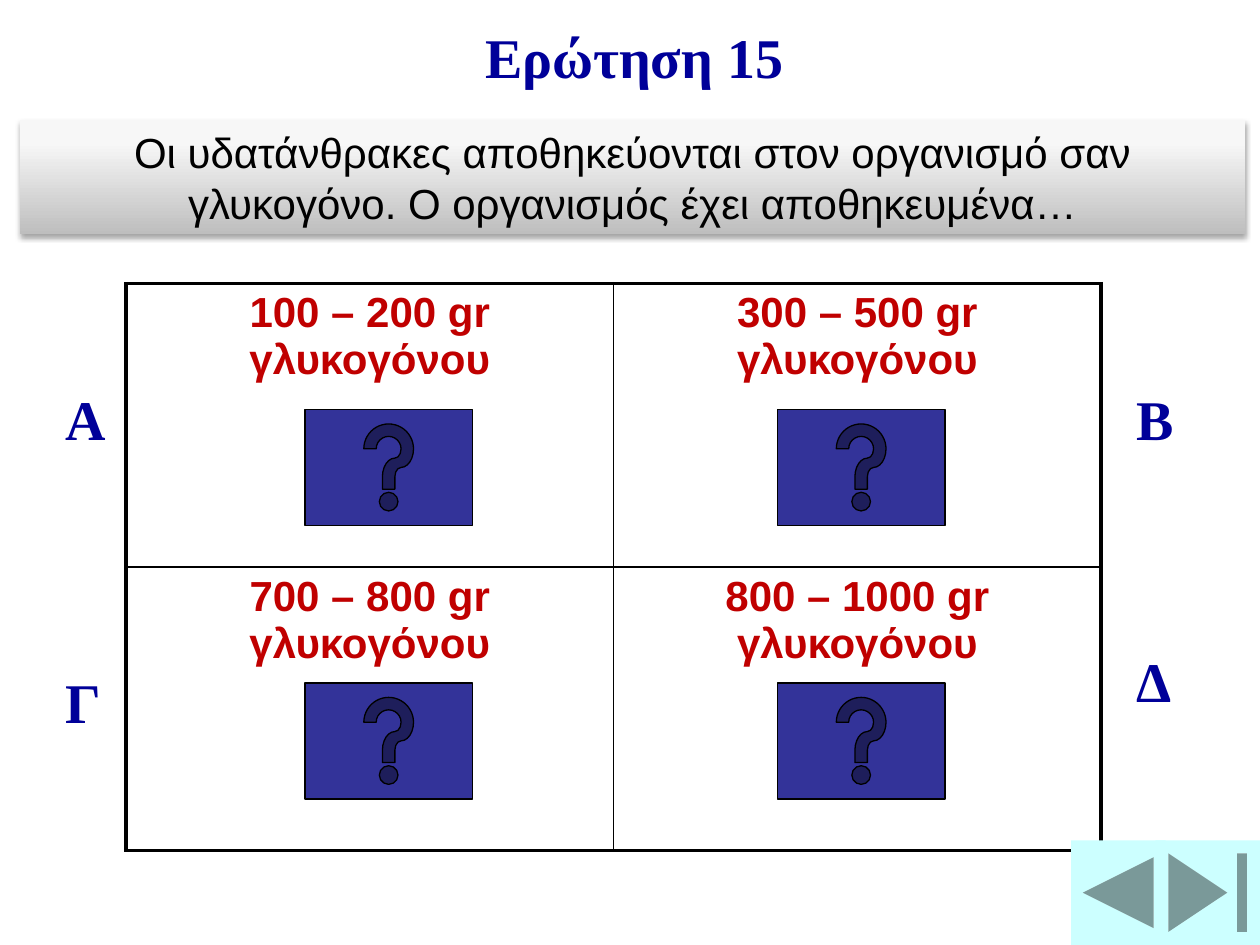
"""Build a quiz slide with four answers, help buttons and navigation buttons."""
from copy import deepcopy
from typing import NamedTuple, Optional

from lxml import etree
from pptx import Presentation
from pptx.dml.color import RGBColor
from pptx.enum import shapes, text
from pptx.oxml import ns
from pptx.util import Inches, Pt

NAVY = RGBColor(0x00, 0x00, 0x99)
INDIGO = RGBColor(0x33, 0x33, 0x99)
RED = RGBColor(0xC0, 0x00, 0x00)
CYAN = RGBColor(0xCC, 0xFF, 0xFF)
BLACK = RGBColor(0x00, 0x00, 0x00)
WHITE = RGBColor(0xFF, 0xFF, 0xFF)
QUESTION_GRADIENT = (
    (0, RGBColor(0xBE, 0xBE, 0xBE)),
    (0.8, RGBColor(0xF7, 0xF7, 0xF7)),
    (1, RGBColor(0xF8, 0xF8, 0xF8)),
)
OUTER_BORDER, INNER_BORDER = Pt(2.25), Pt(1)


class Letter(NamedTuple):
    label: str
    left: float
    top: float


class Button(NamedTuple):
    preset: shapes.MSO_SHAPE
    left: float
    top: float
    width: float
    height: float
    fill: RGBColor
    line: Optional[RGBColor] = None


ANSWERS = (
    ("100 – 200 gr γλυκογόνου", "300 – 500 gr γλυκογόνου"),
    ("700 – 800 gr γλυκογόνου", "800 – 1000 gr γλυκογόνου"),
)
LETTERS = (
    Letter("Α", 0.42, 3),
    Letter("Γ", 0.42, 5.25),
    Letter("Β", 8.92, 3),
    Letter("Δ", 8.92, 5.08),
)
HELP_BUTTONS = [
    Button(shapes.MSO_SHAPE.ACTION_BUTTON_HELP, left, top, 1.33, 0.92, INDIGO, BLACK)
    for top in (3.25, 5.42)
    for left in (2.42, 6.17)
]
NAVIGATION = [
    Button(shapes.MSO_SHAPE.ACTION_BUTTON_END, 9.17, 6.67, 0.83, 0.83, CYAN),
    Button(shapes.MSO_SHAPE.ACTION_BUTTON_BACK_OR_PREVIOUS, 8.5, 6.67, 0.75, 0.83, CYAN),
]


def write(frame, words: str, size: float, face: str, color: RGBColor,
          bold: bool, align: text.PP_ALIGN) -> None:
    """Write one formatted run into a text frame."""
    frame.word_wrap = True
    paragraph = frame.paragraphs[0]
    paragraph.alignment = align
    run = paragraph.add_run()
    run.text = words
    run.font.size = Pt(size)
    run.font.name = face
    run.font.bold = bold
    run.font.color.rgb = color


def write_heading(frame, words: str) -> None:
    """Write a heading or an answer letter."""
    frame.auto_size = text.MSO_AUTO_SIZE.NONE
    frame.vertical_anchor = text.MSO_ANCHOR.TOP
    write(frame, words, 32, "Times New Roman", NAVY, True, text.PP_ALIGN.LEFT)


def set_borders(cell, widths: dict[str, int]) -> None:
    """Give each named side of a cell a black border."""
    properties = cell._tc.get_or_add_tcPr()
    for index, (side, width) in enumerate(widths.items()):
        border = etree.Element(ns.qn(f"a:ln{side}"), w=str(int(width)))
        fill = etree.SubElement(border, ns.qn("a:solidFill"))
        etree.SubElement(fill, ns.qn("a:srgbClr"), val=str(BLACK))
        properties.insert(index, border)


def add_answers(slide) -> None:
    """Add the two by two table of answers."""
    answers = slide.shapes.add_table(
        2, 2, Inches(1), Inches(2.25), Inches(7.74), Inches(4.5)).table
    answers.first_row = answers.horz_banding = False
    for row, row_answers in enumerate(ANSWERS):
        for column, answer in enumerate(row_answers):
            cell = answers.cell(row, column)
            cell.fill.solid()
            cell.fill.fore_color.rgb = WHITE
            write(cell.text_frame, answer, 24, "Arial", RED, True, text.PP_ALIGN.CENTER)
            set_borders(cell, {
                "L": INNER_BORDER if column else OUTER_BORDER,
                "R": OUTER_BORDER if column else INNER_BORDER,
                "T": INNER_BORDER if row else OUTER_BORDER,
                "B": OUTER_BORDER if row else INNER_BORDER,
            })


def add_letter(slide, letter: Letter) -> None:
    """Add the letter beside an answer."""
    box = slide.shapes.add_textbox(
        Inches(letter.left), Inches(letter.top), Inches(0.5), Inches(0.63))
    write_heading(box.text_frame, letter.label)


def add_button(slide, button: Button) -> None:
    """Add an action button."""
    shape = slide.shapes.add_shape(
        button.preset, Inches(button.left), Inches(button.top),
        Inches(button.width), Inches(button.height))
    shape.shadow.inherit = False
    shape.fill.solid()
    shape.fill.fore_color.rgb = button.fill
    if button.line is None:
        shape.line.fill.background()
    else:
        shape.line.color.rgb = button.line
        shape.line.width = Pt(0.75)


def add_question(slide) -> None:
    """Add the shaded question banner."""
    banner = slide.shapes.add_shape(
        shapes.MSO_SHAPE.RECTANGLE, Inches(0.16), Inches(0.95), Inches(9.72), Inches(0.91))
    banner.line.fill.background()
    banner.fill.gradient()
    banner.fill.gradient_angle = 90
    stop_list = banner._element.spPr.find(".//" + ns.qn("a:gsLst"))
    stop_list.append(deepcopy(stop_list[-1]))
    for stop, (position, color) in zip(banner.fill.gradient_stops, QUESTION_GRADIENT):
        stop.position = position
        stop.color.rgb = color
    banner.shadow.inherit = False
    effects = banner._element.spPr.find(ns.qn("a:effectLst"))
    shadow = etree.SubElement(
        effects, ns.qn("a:outerShdw"), blurRad=str(Pt(3.1)), dist=str(Pt(1.8)),
        dir="5400000", rotWithShape="0")
    shade = etree.SubElement(shadow, ns.qn("a:srgbClr"), val=str(BLACK))
    etree.SubElement(shade, ns.qn("a:alpha"), val="35000")
    write(banner.text_frame,
          "Οι υδατάνθρακες αποθηκεύονται στον οργανισμό σαν γλυκογόνο. "
          "Ο οργανισμός έχει αποθηκευμένα…",
          24, "Arial", BLACK, False, text.PP_ALIGN.CENTER)


def main() -> None:
    """Build and save the slide."""
    deck = Presentation()
    deck.slide_width, deck.slide_height = Inches(10), Inches(7.5)
    slide = deck.slides.add_slide(deck.slide_layouts[5])
    title = slide.shapes.title
    title.left, title.top = Inches(3.75), Inches(0.13)
    title.width, title.height = Inches(2.67), Inches(0.64)
    write_heading(title.text_frame, "Ερώτηση 15")
    add_answers(slide)
    for letter in LETTERS:
        add_letter(slide, letter)
    for button in HELP_BUTTONS + NAVIGATION:
        add_button(slide, button)
    add_question(slide)
    deck.save("out.pptx")


if __name__ == "__main__":
    main()
